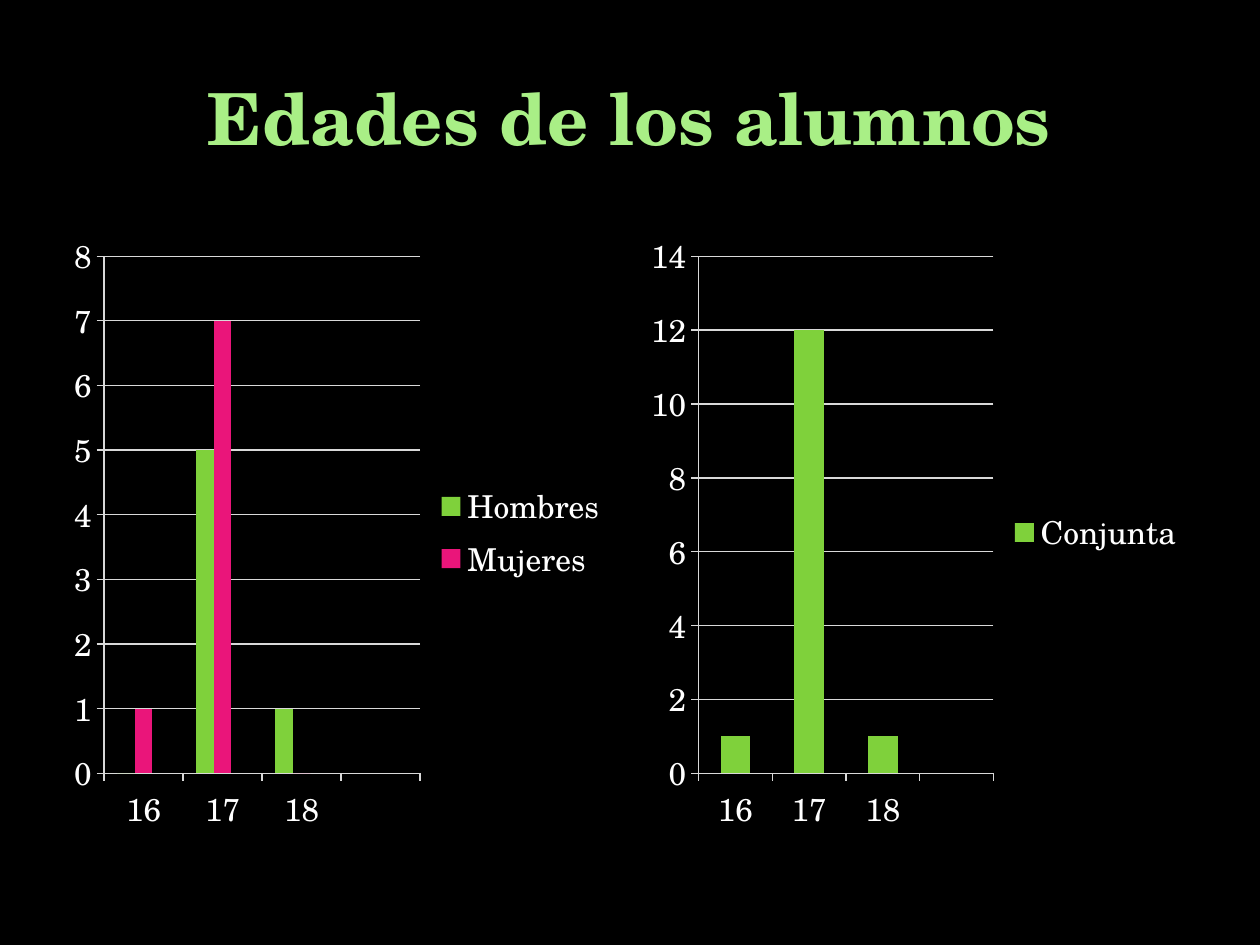
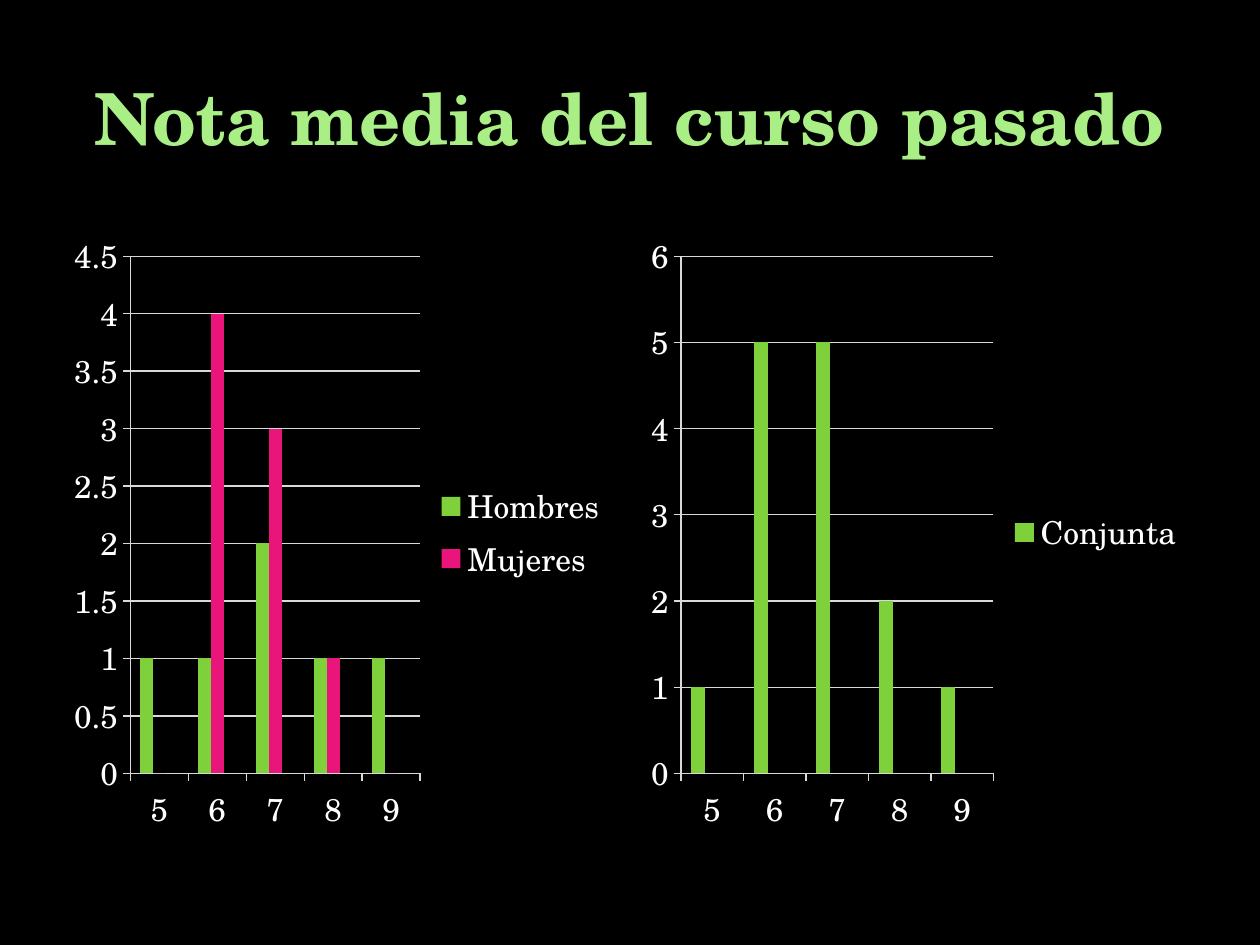
from dataclasses import dataclass

from lxml.etree import SubElement
from pptx import Presentation
from pptx.chart.data import CategoryChartData as ChartData
from pptx.dml.color import RGBColor as Rgb
from pptx.enum.chart import XL_CHART_TYPE as ChartType
from pptx.enum.chart import XL_LEGEND_POSITION as LegendPosition
from pptx.enum.chart import XL_TICK_MARK as TickMark
from pptx.enum.text import MSO_ANCHOR as Anchor
from pptx.enum.text import PP_ALIGN as Align
from pptx.oxml.ns import qn
from pptx.util import Cm, Pt


@dataclass(frozen=True)
class Theme:
    font: str = "TeX Gyre Schola"
    background: Rgb = Rgb(0x00, 0x00, 0x00)
    title: Rgb = Rgb(0xA9, 0xEF, 0x86)
    text: Rgb = Rgb(0xFF, 0xFF, 0xFF)
    axis: Rgb = Rgb(0xD9, 0xD9, 0xD9)
    series: tuple = (
        Rgb(0x7F, 0xD1, 0x3B),
        Rgb(0xEA, 0x15, 0x7A),
        Rgb(0xFE, 0xB8, 0x0A),
    )
    title_size: Pt = Pt(41)
    chart_size: Pt = Pt(18)
    axis_width: Pt = Pt(0.75)


THEME = Theme()
MARGIN = Cm(1.27)
CONTENT_WIDTH = Cm(22.86)
CHART_TOP = Cm(4.45)
CHART_WIDTH = Cm(11.23)
CHART_HEIGHT = Cm(12.57)
CHART_LEFTS = (MARGIN, MARGIN + CONTENT_WIDTH - CHART_WIDTH)

AGES = ("16", "17", "18", "")
GRADES = ("5", "6", "7", "8", "9")

SLIDES = (
    ("Edades de los alumnos", AGES, (
        {"Hombres": (0, 5, 1, None), "Mujeres": (1, 7, 0, None), "Series 3": None},
        {"Conjunta": (1, 12, 1, None)},
    )),
    ("Nota media del curso pasado", GRADES, (
        {"Hombres": (1, 1, 2, 1, 1), "Mujeres": (0, 4, 3, 1, 0), "Series 3": None},
        {"Conjunta": (1, 5, 5, 2, 1), "Series 2": None, "Series 3": None},
    )),
)


def style_font(font, size, color):
    font.name = THEME.font
    font.size = size
    font.color.rgb = color


def style_line(line):
    line.color.rgb = THEME.axis
    line.width = THEME.axis_width


def add_title(slide, wording):
    title = slide.shapes.add_textbox(MARGIN, Cm(0.76), CONTENT_WIDTH, Cm(3.18))
    frame = title.text_frame
    frame.word_wrap = True
    frame.vertical_anchor = Anchor.MIDDLE
    frame.text = wording
    heading = frame.paragraphs[0]
    heading.alignment = Align.CENTER
    for run in heading.runs:
        style_font(run.font, THEME.title_size, THEME.title)
        run.font.bold = True


def hide_legend_entries(legend, indexes):
    position = legend._element.find(qn("c:legendPos"))
    for index in reversed(indexes):
        entry = legend._element.makeelement(qn("c:legendEntry"))
        SubElement(entry, qn("c:idx")).set("val", str(index))
        SubElement(entry, qn("c:delete")).set("val", "1")
        position.addnext(entry)


def add_column_chart(slide, left, categories, groups):
    counts = ChartData()
    counts.categories = categories
    for name, values in groups.items():
        counts.add_series(name, values or [None] * len(categories))
    chart = slide.shapes.add_chart(
        ChartType.COLUMN_CLUSTERED, left, CHART_TOP, CHART_WIDTH, CHART_HEIGHT, counts
    ).chart
    chart.has_title = False
    style_font(chart.font, THEME.chart_size, THEME.text)

    plot = chart.plots[0]
    plot.vary_by_categories = False
    plot.gap_width = 150
    plot.overlap = 0
    for series, color in zip(plot.series, THEME.series):
        series.format.fill.solid()
        series.format.fill.fore_color.rgb = color

    for axis in (chart.category_axis, chart.value_axis):
        axis.major_tick_mark = TickMark.OUTSIDE
        style_line(axis.format.line)
    chart.value_axis.has_major_gridlines = True
    style_line(chart.value_axis.major_gridlines.format.line)

    chart.has_legend = True
    chart.legend.position = LegendPosition.RIGHT
    chart.legend.include_in_layout = False
    empty = [i for i, values in enumerate(groups.values()) if values is None]
    hide_legend_entries(chart.legend, empty)


def add_comparison_slide(deck, wording, categories, charts):
    slide = deck.slides.add_slide(deck.slide_layouts[6])
    slide.background.fill.solid()
    slide.background.fill.fore_color.rgb = THEME.background
    add_title(slide, wording)
    for left, groups in zip(CHART_LEFTS, charts):
        add_column_chart(slide, left, categories, groups)


def main():
    deck = Presentation()
    deck.slide_width = Cm(25.4)
    deck.slide_height = Cm(19.05)
    for wording, categories, charts in SLIDES:
        add_comparison_slide(deck, wording, categories, charts)
    deck.save("out.pptx")


if __name__ == "__main__":
    main()
